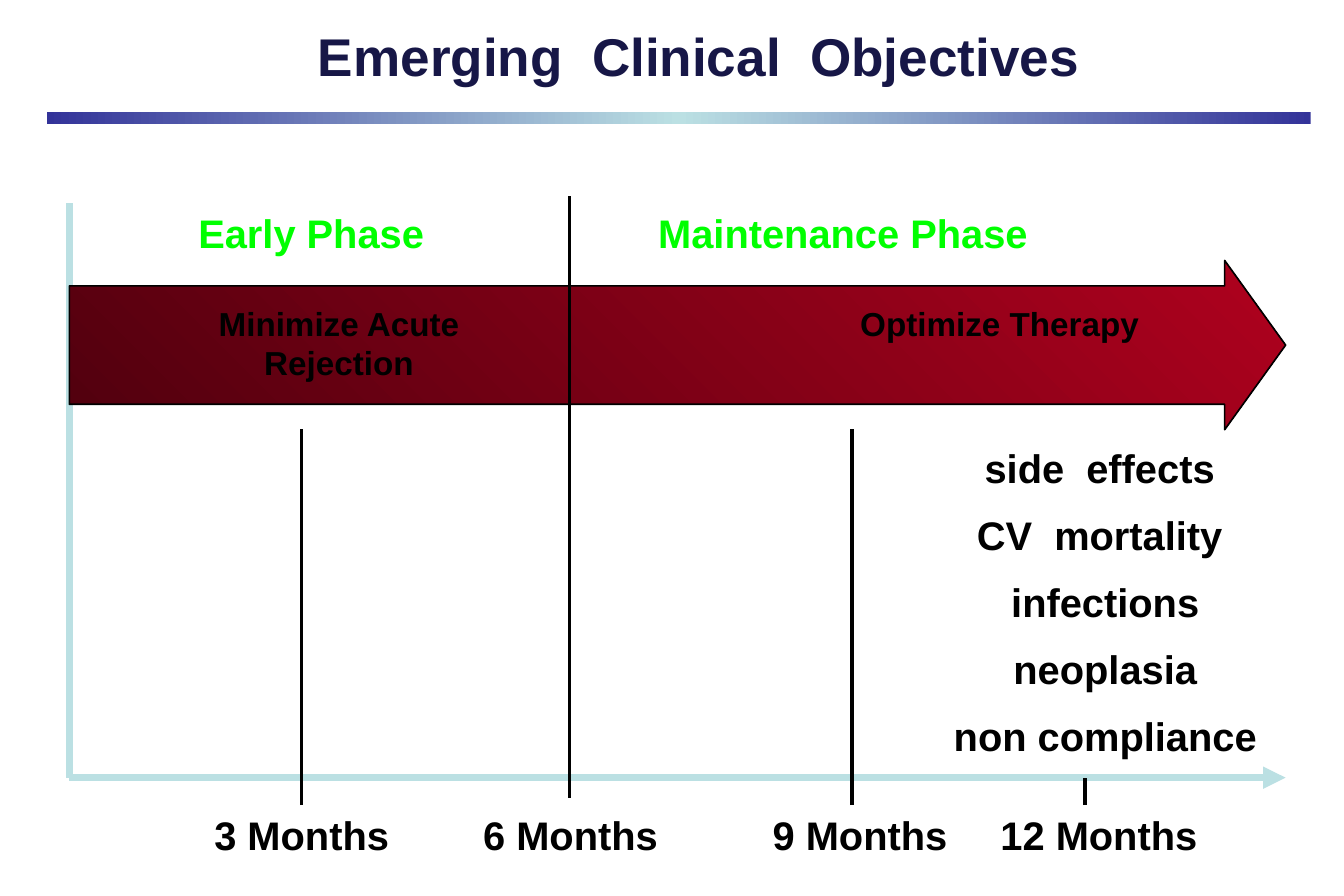
from lxml.etree import SubElement
from pptx import Presentation
from pptx.dml.color import RGBColor
from pptx.enum.shapes import MSO_CONNECTOR as Conn, MSO_SHAPE as Kind
from pptx.enum.text import MSO_ANCHOR as Anchor, PP_ALIGN as Align
from pptx.oxml.ns import qn
from pptx.util import Pt

BLACK, NAVY, GREEN, AQUA = "000000", "171747", "00FF00", "BBE0E3"


def paint(code):
    return RGBColor.from_string(code)


def text(slide, box, lines, size=24, color=BLACK, wrap=True,
         anchor=Anchor.TOP, gap=1.0, shifts=()):
    frame = slide.shapes.add_textbox(*map(Pt, box)).text_frame
    frame.word_wrap = wrap
    frame.vertical_anchor = anchor
    for i, line in enumerate(lines):
        para = frame.paragraphs[0] if i == 0 else frame.add_paragraph()
        para.alignment = Align.CENTER
        para.line_spacing = gap
        if shifts:
            para._p.get_or_add_pPr().set("marL", str(Pt(shifts[i])))
        run = para.add_run()
        run.text = line
        font = run.font
        font.name, font.size, font.bold = "Arial", Pt(size), True
        font.color.rgb = paint(color)


def line(slide, x1, y1, x2, y2, color=BLACK, width=2.25, head=False):
    link = slide.shapes.add_connector(Conn.STRAIGHT, Pt(x1), Pt(y1), Pt(x2), Pt(y2))
    link.line.color.rgb = paint(color)
    link.line.width = Pt(width)
    if head:
        SubElement(link.line._get_or_add_ln(), qn("a:tailEnd"), type="triangle")
    SubElement(link._element.spPr, qn("a:effectLst"))


def blend(slide, kind, box, colors, angle):
    """Add a shape whose fill runs evenly through the colours."""
    shape = slide.shapes.add_shape(kind, *map(Pt, box))
    shape.shadow.inherit = False
    shape.line.fill.background()
    shape.fill.gradient()
    shape.fill.gradient_angle = angle
    stops = shape._element.spPr.find(qn("a:gradFill")).find(qn("a:gsLst"))
    for stop in list(stops):
        stops.remove(stop)
    for i, color in enumerate(colors):
        place = str(100000 * i // (len(colors) - 1))
        stop = SubElement(stops, qn("a:gs"), pos=place)
        SubElement(stop, qn("a:srgbClr"), val=color)
    return shape


def header(slide, box):
    x, y, w, h = box
    text(slide, (x + 39, y, 708, 47), ["Emerging  Clinical  Objectives"],
         size=32, color=NAVY, anchor=Anchor.BOTTOM)
    blend(slide, Kind.RECTANGLE, (x, y + h - 7.2, w, 7.2), ["333399", AQUA, "333399"], 0)


def phases(slide, box):
    x, y, w, h = box
    base = y + h

    # Axes
    line(slide, x, base, x, y + 4.5, AQUA, 4.5)
    line(slide, x, base, x + w, base, AQUA, 4.5, head=True)

    # Phase arrow
    arrow = blend(slide, Kind.RIGHT_ARROW, (x, y + 39, w, 102), ["51000E", "AF011E"], 45)
    arrow.adjustments[0], arrow.adjustments[1] = 0.7, 0.36
    arrow.line.color.rgb = paint(BLACK)
    arrow.line.width = Pt(1)

    # Month marks: name, offset, top, bottom, label offset
    marks = [("3", 140, y + 140.5, base + 16.5, 140),
             ("6", 301.5, y, base + 12, 302),
             ("9", 471.5, y + 140.5, base + 16.5, 476.5),
             ("12", 612, base, base + 16.5, 620.5)]
    for month, dx, top, end, mid in marks:
        line(slide, x + dx, end, x + dx, top)
        text(slide, (x + mid - 70, base + 16.5, 140, 36), [f"{month} Months"])

    # Phase names and aims
    text(slide, (x + 70.5, y + 4.5, 150.5, 36), ["Early Phase"], color=GREEN, wrap=False)
    text(slide, (x + 347.5, y + 4.5, 237.5, 36), ["Maintenance Phase"],
         color=GREEN, wrap=False)
    text(slide, (x + 63.5, y + 61, 198, 55.5), ["Minimize Acute Rejection"], size=20)
    text(slide, (x + 458.5, y + 61, 204.5, 31), ["Optimize Therapy"], size=20)

    # Long-term concerns
    text(slide, (x + 503, y + 134.5, 236, 209),
         ["side  effects", "CV  mortality", "infections", "neoplasia", "non compliance"],
         gap=1.4, shifts=(0, 0, 6.7, 6.7, 6.7))


def main():
    deck = Presentation()
    deck.slide_width, deck.slide_height = Pt(810), Pt(540)
    slide = deck.slides.add_slide(deck.slide_layouts[6])
    header(slide, (28.3, 9.2, 761.7, 65.6))
    phases(slide, (41.8, 118, 733, 350.7))
    deck.save("out.pptx")


if __name__ == "__main__":
    main()
